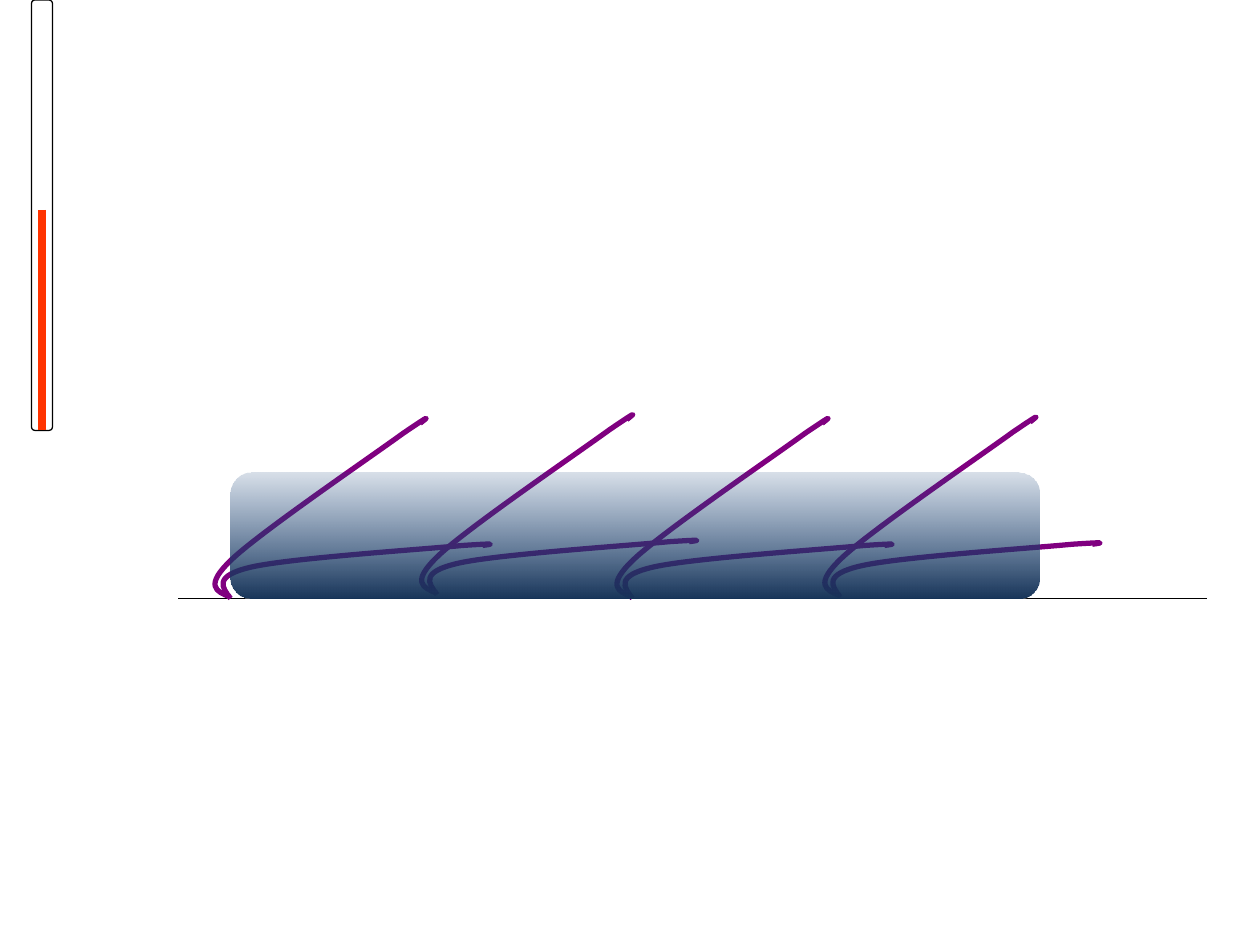
from dataclasses import dataclass
from typing import Optional

from lxml.etree import SubElement
from pptx import Presentation
from pptx.dml.color import RGBColor
from pptx.enum.shapes import MSO_CONNECTOR as Connector, MSO_SHAPE as Preset
from pptx.oxml.ns import qn
from pptx.util import Inches, Pt

COLUMNS, ROWS = 120, 90
BLACK, RED, PURPLE = "000000", "FF3300", "800080"
HOOK_START = (14, 44)
HOOK_CURVES = [
    (7, 35), (0, 26), (31, 19),
    (62, 12), (167, 5), (198, 2),
    (228, 0), (221, 1), (214, 2),
]
TILT = {"rotation": 329.5}
TILT_SHIFT = (-3.06, -5.88)


@dataclass
class Rule:
    start: tuple[float, float]
    end: tuple[float, float]
    colour: str
    width: float


@dataclass
class Panel:
    column: float
    row: float
    columns: float
    rows: float


@dataclass
class Hook:
    column: float
    row: float


BASELINE = Rule((17, 57), (115, 57), BLACK, 0.75)
LOWER_LEVEL = Rule((4, 31), (4, 41), RED, 4.5)
UPPER_LEVEL = Rule((4, 20), (4, 31.2), RED, 4.5)
TUBE = Panel(3, 0, 2, 41)
BLOCK = Panel(22, 45, 77, 12)
HOOKS = [Hook(20.28, 51.72), Hook(39.96, 51.36), Hook(58.56, 51.72), Hook(78.36, 51.6)]

deck = Presentation()
deck.slide_width, deck.slide_height = Inches(10), Inches(7.5)
page = deck.slides.add_slide(deck.slide_layouts[6])


def across(columns: float) -> int:
    return round(deck.slide_width * columns / COLUMNS)


def down(rows: float) -> int:
    return round(deck.slide_height * rows / ROWS)


def colour(value: str) -> RGBColor:
    return RGBColor.from_string(value)


def apply(target, values: dict) -> None:
    for name, value in values.items():
        setattr(target, name, value)


def style_line(line, value: str, width: float) -> None:
    line.color.rgb = colour(value)
    apply(line, {"width": Pt(width)})


def draw_rule(rule: Rule, foot: Optional[object] = None) -> None:
    (left, top), (right, bottom) = rule.start, rule.end
    connector = page.shapes.add_connector(
        Connector.STRAIGHT, across(left), down(top), across(right), down(bottom)
    )
    style_line(connector.line, rule.colour, rule.width)
    SubElement(connector._element.spPr, qn("a:effectLst"))
    if foot is not None:
        connector.end_connect(foot, 2)
        connector.begin_x = connector.end_x


def draw_panel(panel: Panel):
    box = page.shapes.add_shape(
        Preset.ROUNDED_RECTANGLE,
        across(panel.column), down(panel.row), across(panel.columns), down(panel.rows),
    )
    box.shadow.inherit = False
    box.adjustments[0] = 0.167
    return box


def draw_hook(hook: Hook, shift: tuple[float, float], values: dict) -> None:
    builder = page.shapes.build_freeform(*HOOK_START, scale=Inches(0.01))
    builder.add_line_segments(HOOK_CURVES, close=False)
    shape = builder.convert_to_shape(across(hook.column + shift[0]), down(hook.row + shift[1]))
    outline = shape._element.find(".//" + qn("a:path"))
    segments = outline.findall(qn("a:lnTo"))
    for first in range(0, len(segments), 3):
        curve = SubElement(outline, qn("a:cubicBezTo"))
        for segment in segments[first:first + 3]:
            curve.append(segment[0])
            outline.remove(segment)
    shape.shadow.inherit = False
    shape.fill.background()
    style_line(shape.line, PURPLE, 3)
    apply(shape, values)


def shade_block(box) -> None:
    box.line.fill.background()
    box.fill.gradient()
    box.fill.gradient_angle = 270
    stops = box.fill.gradient_stops
    for stop, value, position in zip(stops, ("1F497D", "163459"), (0, 1)):
        stop.color.rgb = colour(value)
        apply(stop, {"position": position})
    tint = box._element.spPr.find(".//" + qn("a:srgbClr"))
    SubElement(tint, qn("a:alpha"), val="17000")


def main() -> None:
    draw_rule(BASELINE)
    tube = draw_panel(TUBE)
    tube.fill.background()
    style_line(tube.line, BLACK, 0.75)
    draw_rule(LOWER_LEVEL, tube)
    draw_rule(UPPER_LEVEL)
    for shift, values in (((0, 0), {}), (TILT_SHIFT, TILT)):
        for hook in HOOKS:
            draw_hook(hook, shift, values)
    shade_block(draw_panel(BLOCK))
    deck.save("out.pptx")


if __name__ == "__main__":
    main()
